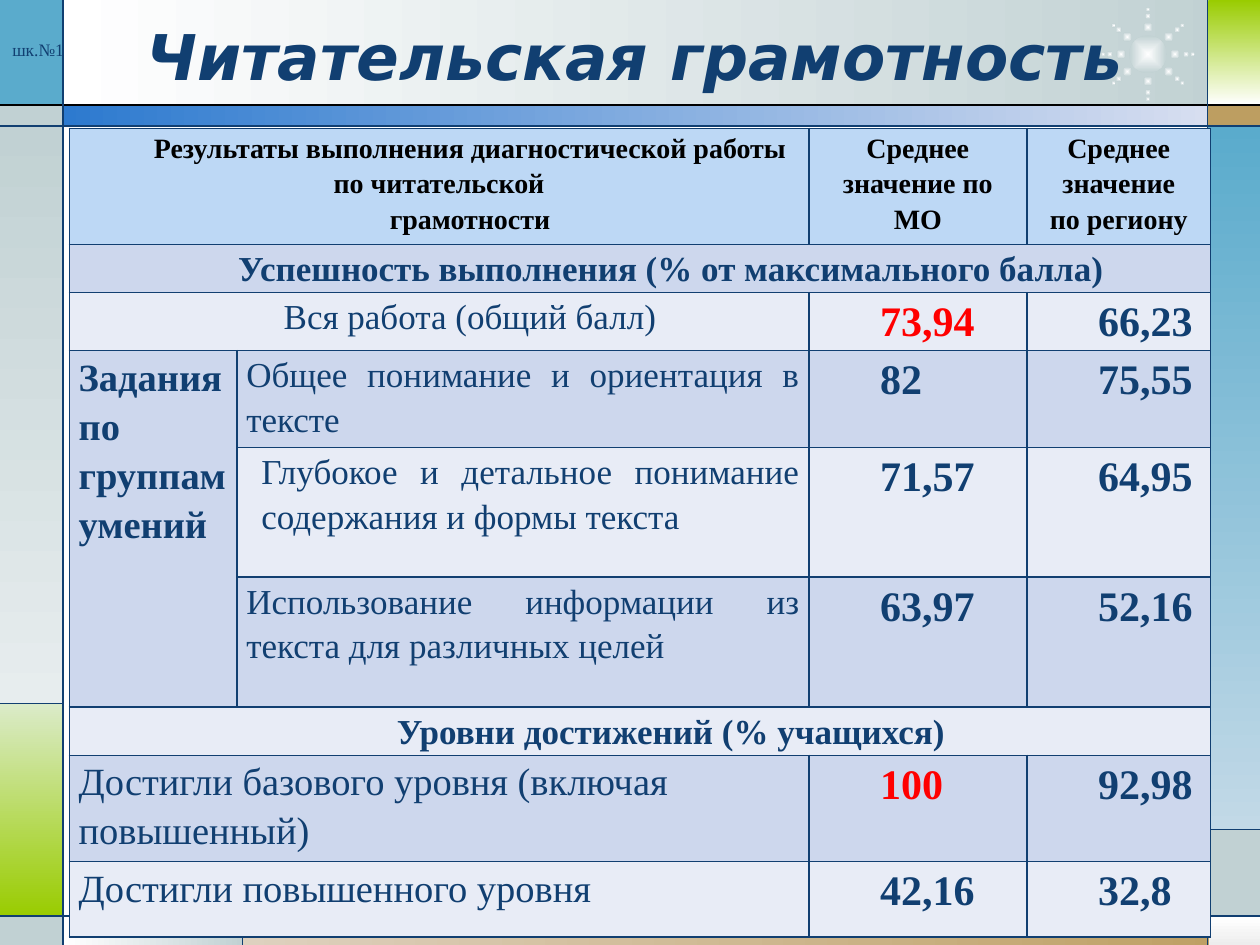
"""Build the reading literacy results slide."""
from math import cos, radians, sin

from lxml.etree import SubElement
from pptx import Presentation
from pptx.dml.color import RGBColor
from pptx.enum.shapes import MSO_CONNECTOR as LINK, MSO_SHAPE as FORM
from pptx.enum.text import MSO_ANCHOR as ANCHOR, PP_ALIGN as ALIGN
from pptx.oxml.ns import qn
from pptx.util import Pt

WHITE = RGBColor(0xFF, 0xFF, 0xFF)
BLACK = RGBColor(0x00, 0x00, 0x00)
RED = RGBColor(0xFF, 0x00, 0x00)
NAVY = RGBColor(0x11, 0x3F, 0x71)
GREY = RGBColor(0xC1, 0xD1, 0xD3)
MIST = RGBColor(0xE7, 0xED, 0xEE)
PALE = RGBColor(0xED, 0xED, 0xED)
AQUA = RGBColor(0x5A, 0xAB, 0xCC)
SKY = RGBColor(0xC2, 0xD9, 0xE7)
LIME = RGBColor(0x99, 0xCC, 0x00)
MINT = RGBColor(0xDB, 0xEB, 0xC9)
SAND = RGBColor(0xDE, 0xD1, 0xBF)
TAN = RGBColor(0xBD, 0x9E, 0x61)
BLUE = RGBColor(0x2D, 0x7A, 0xCF)
ICE = RGBColor(0xD7, 0xDE, 0xF0)
HEAD = RGBColor(0xBD, 0xD8, 0xF5)
DARK = RGBColor(0xCD, 0xD7, 0xED)
LIGHT = RGBColor(0xE8, 0xEC, 0xF6)
SERIF = "Times New Roman"


def add_form(form, box, first, last=None, angle=0):
    shape = slide.shapes.add_shape(form, *map(Pt, box))
    shape.shadow.inherit = False
    shape.line.fill.background()
    if last is None:
        shape.fill.solid()
        shape.fill.fore_color.rgb = first
        return shape
    shape.fill.gradient()
    shape.fill.gradient_angle = angle
    for stop, tint in zip(shape.fill.gradient_stops, (first, last)):
        stop.color.rgb = tint
    return shape


def add_dot(x, y, size):
    dot = add_form(FORM.OVAL, (x - size / 2, y - size / 2, size, size), WHITE, GREY)
    grad = dot.element.spPr.find(qn("a:gradFill"))
    grad.remove(grad.find(qn("a:lin")))
    glow = SubElement(grad, qn("a:path"))
    glow.set("path", "shape")
    rect = SubElement(glow, qn("a:fillToRect"))
    for side in "ltrb":
        rect.set(side, "50000")


deck = Presentation()
deck.slide_width, deck.slide_height = Pt(720), Pt(540)
slide = deck.slides.add_slide(deck.slide_layouts[6])

bands = [
    ((36, 0, 667.4, 60.4), WHITE, GREY, 0),
    ((0, 0, 36, 60.4), AQUA),
    ((0, 60, 36, 12), GREY),
    ((0, 72, 36, 330), GREY, MIST, 270),
    ((0, 402, 36, 122), MINT, LIME, 270),
    ((0, 524, 36, 16), GREY),
    ((36, 523.5, 103, 16.5), WHITE, GREY, 0),
    ((138.4, 523.5, 581.6, 16.5), SAND, TAN, 0),
    ((691, 524, 29, 16), WHITE, PALE, 270),
    ((690.5, 474, 29.5, 50), GREY),
    ((690, 72, 30, 402), AQUA, SKY, 270),
    ((690, 60, 30, 12), TAN),
    ((690.5, 0, 29.5, 60), LIME, WHITE, 270),
    ((36, 60, 654.5, 12), BLUE, ICE, 0),
]
for band in bands:
    add_form(FORM.RECTANGLE, *band)

add_dot(656, 31, 21.6)
for turn in (0, 40, 90, 140, 180, 220, 270, 320):
    for reach, size in ((21.8, 3.4), (25.6, 2.5), (15.4, 5.4)):
        add_dot(656 + reach * cos(radians(turn)), 31 + reach * sin(radians(turn)), size)

rules = [
    (0, 60, 720, 60, BLACK),
    (0, 72, 720, 72, NAVY),
    (0, 523.5, 720, 523.5, NAVY),
    (36, 0, 36, 540, NAVY),
    (690, 0, 690, 540, NAVY),
    (36, 402, 0, 402, NAVY),
    (138.4, 523.5, 138.4, 540, NAVY),
    (690, 474, 720, 474, NAVY),
]
for *ends, tint in rules:
    rule = slide.shapes.add_connector(LINK.STRAIGHT, *map(Pt, ends))
    rule.line.color.rgb = tint
    rule.line.width = Pt(0.75)
    SubElement(rule.element.spPr, qn("a:effectLst"))

labels = [
    ("Читательская грамотность", (48, 9.4, 629.3, 44.6), "DejaVu Sans", 36, True, ALIGN.CENTER),
    ("шк.№1", (0, 18.7, 720, 19.4), SERIF, 10, False, ALIGN.LEFT),
]
for text, box, face, size, strong, align in labels:
    frame = slide.shapes.add_textbox(*map(Pt, box)).text_frame
    frame.word_wrap = True
    frame.vertical_anchor = ANCHOR.MIDDLE
    frame.text = text
    para = frame.paragraphs[0]
    para.alignment = align
    font = para.runs[0].font
    font.name, font.size, font.color.rgb = face, Pt(size), NAVY
    font.bold = font.italic = strong

widths = (95.8, 326.8, 124.6, 105.1)
heights = (66.2, 27.4, 27.4, 49.7, 74.2, 74.2, 27.4, 54.7, 43.2)
grid = slide.shapes.add_table(
    len(heights), len(widths), Pt(39.6), Pt(73.4), Pt(sum(widths)), Pt(sum(heights))
).table
grid.first_row = grid.horz_banding = False
for col, width in zip(grid.columns, widths):
    col.width = Pt(width)
for row, height in zip(grid.rows, heights):
    row.height = Pt(height)

for r in range(len(heights)):
    for c in range(len(widths)):
        cell = grid.cell(r, c)
        cell.margin_left = cell.margin_right = Pt(5.4)
        cell.margin_top = cell.margin_bottom = 0
        props = cell._tc.get_or_add_tcPr()
        for side in ("lnL", "lnR", "lnT", "lnB"):
            edge = SubElement(props, qn("a:" + side), w=str(Pt(1)))
            paint = SubElement(edge, qn("a:solidFill"))
            SubElement(paint, qn("a:srgbClr"), val=str(NAVY))
        cell.fill.solid()
        cell.fill.fore_color.rgb = HEAD if r == 0 else DARK if r % 2 else LIGHT

for top, left, bottom, right in (
    (0, 0, 0, 1), (1, 0, 1, 3), (2, 0, 2, 1), (3, 0, 5, 0),
    (6, 0, 6, 3), (7, 0, 7, 1), (8, 0, 8, 1),
):
    grid.cell(top, left).merge(grid.cell(bottom, right))

styles = {
    "lead": (16, True, BLACK, ALIGN.CENTER, 35.4),
    "head": (16, True, BLACK, ALIGN.CENTER, 0),
    "part": (20, True, NAVY, ALIGN.CENTER, 35.4),
    "total": (20, False, NAVY, ALIGN.CENTER, 35.4),
    "group": (22, True, NAVY, ALIGN.LEFT, 0),
    "skill": (20, False, NAVY, ALIGN.JUSTIFY, 0),
    "level": (22, False, NAVY, ALIGN.LEFT, 0),
    "mark": (24, True, NAVY, ALIGN.LEFT, 35.4),
    "best": (24, True, RED, ALIGN.LEFT, 35.4),
}
cells = [
    (0, 0, "lead", "Результаты выполнения диагностической работы по читательской\nграмотности"),
    (0, 2, "head", "Среднее значение по МО"),
    (0, 3, "head", "Среднее значение\nпо региону"),
    (1, 0, "part", "Успешность выполнения (% от максимального балла)"),
    (2, 0, "total", "Вся работа (общий балл)"),
    (3, 0, "group", "Задания по группам умений"),
    (3, 1, "skill", "Общее понимание и ориентация в тексте"),
    (4, 1, "skill", "Глубокое и детальное понимание содержания и формы текста"),
    (5, 1, "skill", "Использование информации из текста для различных целей"),
    (6, 0, "part", "Уровни достижений (% учащихся)"),
    (7, 0, "level", "Достигли базового уровня (включая повышенный)"),
    (8, 0, "level", "Достигли повышенного уровня"),
]
marks = {
    2: ("73,94", "66,23"), 3: ("82", "75,55"), 4: ("71,57", "64,95"),
    5: ("63,97", "52,16"), 7: ("100", "92,98"), 8: ("42,16", "32,8"),
}
for r, (local, region) in marks.items():
    cells += [(r, 2, "best" if r in (2, 7) else "mark", local), (r, 3, "mark", region)]

for r, c, kind, text in cells:
    size, bold, tint, align, indent = styles[kind]
    frame = grid.cell(r, c).text_frame
    frame.text = text
    for para in frame.paragraphs:
        para.alignment = align
        para.line_spacing = 1.15
        props = para._p.get_or_add_pPr()
        props.set("marL", str(Pt(8.6 if (r, c) == (4, 1) else 0)))
        props.set("indent", str(Pt(indent)))
        font = para.runs[0].font
        font.name, font.size, font.bold, font.color.rgb = SERIF, Pt(size), bold, tint

deck.save("out.pptx")
